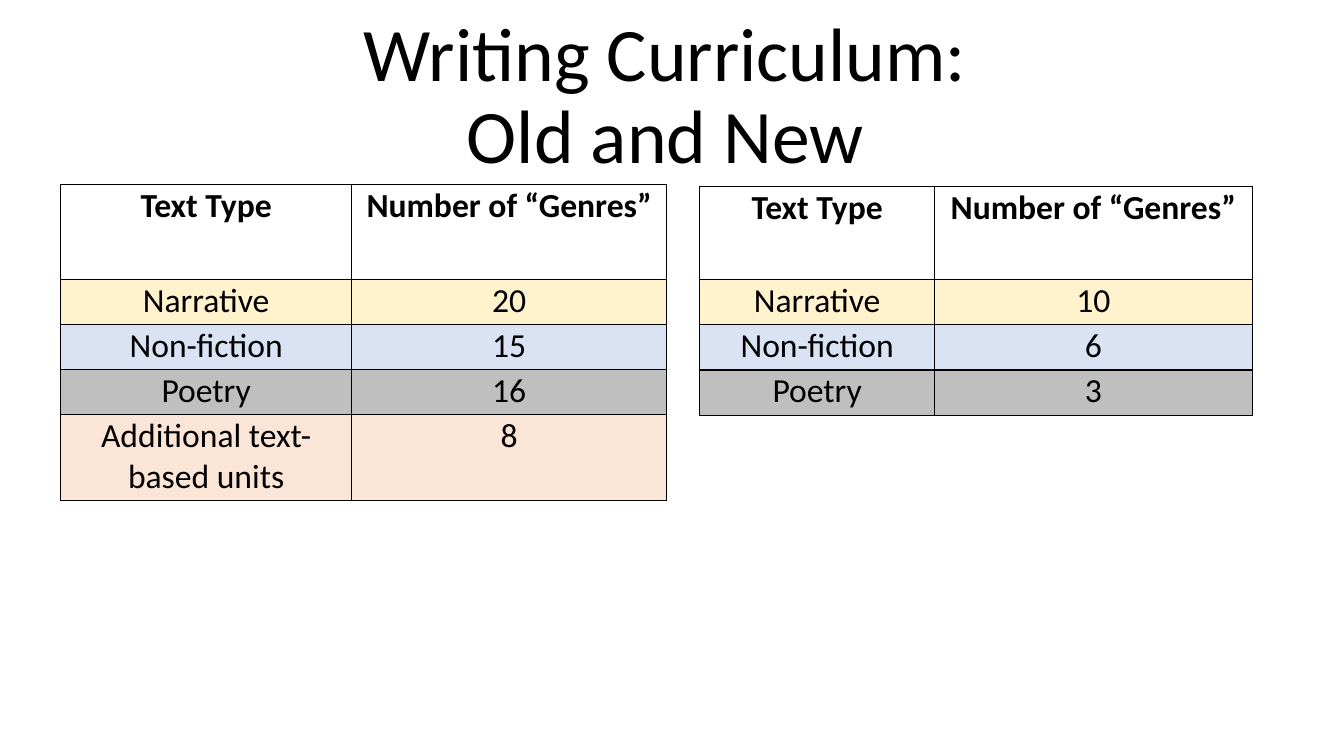
from lxml import etree
from pptx import Presentation
from pptx import util as u
from pptx.dml.color import RGBColor
from pptx.enum import text
from pptx.oxml.ns import qn

COLORS = {
    "ink": "000000",
    "Text Type": "FFFFFF",
    "Narrative": "FFF2CC",
    "Non-fiction": "DAE3F3",
    "Poetry": "BFBFBF",
    "Additional text-based units": "FBE5D6",
}
HEADING = ("Text Type", "Number of “Genres”")


def apply(target, values):
    for name, value in values.items():
        setattr(target, name, value)


class CurriculumPage:
    """Style and current slide; lengths are percentages of the slide."""

    font = "Calibri"
    cell_format = {
        "margin_left": u.Inches(0.01), "margin_right": u.Inches(0.01),
        "margin_top": u.Inches(0.01), "margin_bottom": u.Inches(0.03),
    }

    def __init__(self, deck):
        self.width, self.height = deck.slide_width, deck.slide_height
        self.page = deck.slides.add_slide(deck.slide_layouts[6])

    def x(self, share):
        return round(self.width * share / 100)

    def y(self, share):
        return round(self.height * share / 100)

    def label(self, frame, words, size, bold=False, spacing=None):
        frame.text = words
        para = frame.paragraphs[0]
        apply(para, {"alignment": text.PP_ALIGN.CENTER, "line_spacing": spacing})
        for span in para.runs:
            apply(span.font, {"name": self.font, "size": u.Pt(size), "bold": bold})
            span.font.color.rgb = RGBColor.from_string(COLORS["ink"])

    def title(self, words, left, top, width, height):
        box = self.page.shapes.add_textbox(
            self.x(left), self.y(top), self.x(width), self.y(height))
        apply(box.text_frame, {
            "word_wrap": True, "auto_size": text.MSO_AUTO_SIZE.NONE,
            "vertical_anchor": text.MSO_ANCHOR.BOTTOM})
        self.label(box.text_frame, words, 54, spacing=0.9)

    def border(self, cell):
        properties = cell._tc.get_or_add_tcPr()
        for side in ("lnL", "lnR", "lnT", "lnB"):
            line = etree.SubElement(properties, qn(f"a:{side}"), w=str(u.Pt(1)))
            fill = etree.SubElement(line, qn("a:solidFill"))
            etree.SubElement(fill, qn("a:srgbClr"), val=COLORS["ink"])

    def table(self, genres, left, top, columns, rows):
        entries = [HEADING, *genres.items()]
        frame = self.page.shapes.add_table(
            len(rows), len(columns), self.x(left), self.y(top),
            self.x(sum(columns)), self.y(sum(rows)))
        grid = frame.table
        apply(grid, {"first_row": False, "horz_banding": False})
        for column, share in zip(grid.columns, columns):
            column.width = self.x(share)
        for row, share, entry in zip(grid.rows, rows, entries):
            row.height = self.y(share)
            for cell, words in zip(row.cells, entry):
                apply(cell, self.cell_format)
                self.border(cell)
                cell.fill.solid()
                cell.fill.fore_color.rgb = RGBColor.from_string(COLORS[entry[0]])
                self.label(cell.text_frame, str(words), 24, bold=entry is HEADING)


def main():
    deck = Presentation()
    apply(deck, {"slide_width": u.Inches(13.33), "slide_height": u.Inches(7.5)})
    page = CurriculumPage(deck)

    # Title
    page.title("Writing Curriculum:\vOld and New", 12, 10.93, 75, 13.47)

    # Old curriculum
    page.table(
        {"Narrative": 20, "Non-fiction": 15, "Poetry": 16,
         "Additional text-based units": 8},
        4.5, 24.4, [21.68, 23.41], [12.53] + [5.87] * 3 + [11.2])

    # New curriculum
    page.table(
        {"Narrative": 10, "Non-fiction": 6, "Poetry": 3},
        52.06, 24.67, [17.48, 23.63], [12.27] + [6] * 3)

    deck.save("out.pptx")


if __name__ == "__main__":
    main()
